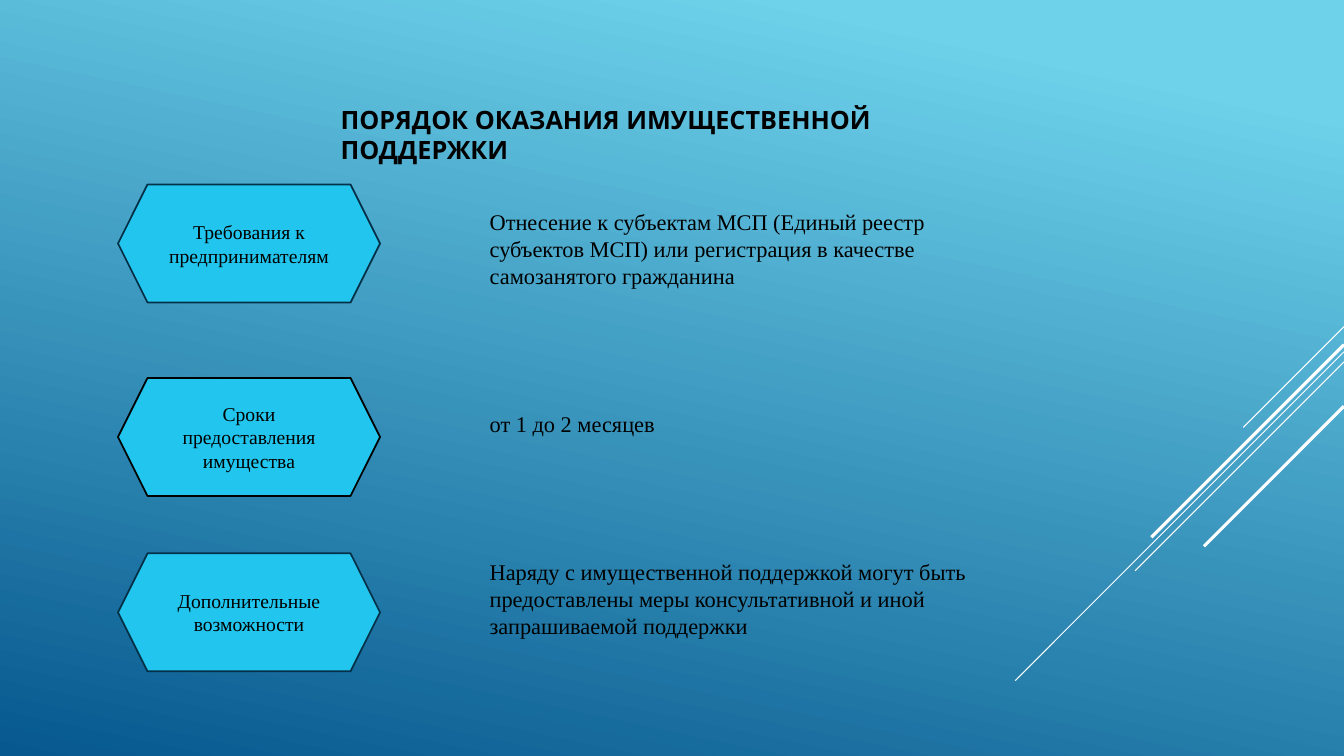
from lxml.etree import SubElement
from pptx import Presentation
from pptx.dml.color import RGBColor
from pptx.enum.shapes import MSO_CONNECTOR, MSO_SHAPE
from pptx.enum.text import MSO_ANCHOR, MSO_AUTO_SIZE, PP_ALIGN
from pptx.oxml.ns import qn
from pptx.util import Pt

SLIDE_WIDTH, SLIDE_HEIGHT = 960, 540
BODY_FONT = "Times New Roman"
BLACK, WHITE, NAVY, CYAN = "000000", "FFFFFF", "043148", "22C5ED"

# Start height at the right edge, horizontal run, line width
DIAGONALS = [
    (233.3, 72, 0.75),
    (251.3, 234.8, 0.75),
    (258.5, 149.2, 0.75),
    (246.2, 137.6, 2.25),
    (290.2, 100, 2.25),
]

# Label, hexagon top, outline, description, description top and width
ROWS = [
    ("Требования к предпринимателям", 131.8, NAVY,
     "Отнесение к субъектам МСП (Единый реестр субъектов МСП) или регистрация "
     "в качестве самозанятого гражданина", 145.4, 386),
    ("Сроки предоставления имущества", 270, BLACK,
     "от 1 до 2 месяцев", 289.4, 399),
    ("Дополнительные возможности", 395.3, NAVY,
     "Наряду с имущественной поддержкой могут быть предоставлены меры "
     "консультативной и иной запрашиваемой поддержки", 395.3, 399),
]


def color(hex_string):
    return RGBColor.from_string(hex_string)


def paint_background(slide):
    fill = slide.background.fill
    fill.gradient()
    fill.gradient_angle = 258
    stops = [(0.11, "6ED2EB"), (1, "06588E")]
    for stop, (position, hex_string) in zip(fill.gradient_stops, stops):
        stop.position = position
        stop.color.rgb = color(hex_string)


def add_diagonal(slide, top, run, width):
    """Draw a 45-degree line down and left from the right slide edge."""
    line = slide.shapes.add_connector(
        MSO_CONNECTOR.STRAIGHT, Pt(SLIDE_WIDTH), Pt(top),
        Pt(SLIDE_WIDTH - run), Pt(top + run))
    line.line.color.rgb = color(WHITE)
    line.line.width = Pt(width)
    SubElement(line._element.spPr, qn("a:effectLst"))


def write(paragraph, text, size, font=BODY_FONT, bold=False):
    run = paragraph.add_run()
    run.text = text
    run.font.name = font
    run.font.size = Pt(size)
    run.font.bold = bold
    run.font.color.rgb = color(BLACK)


def add_text(slide, left, top, width, height, text, size, **style):
    frame = slide.shapes.add_textbox(
        Pt(left), Pt(top), Pt(width), Pt(height)).text_frame
    frame.word_wrap = True
    frame.auto_size = MSO_AUTO_SIZE.SHAPE_TO_FIT_TEXT
    write(frame.paragraphs[0], text, size, **style)


def add_hexagon(slide, top, outline, label):
    shape = slide.shapes.add_shape(
        MSO_SHAPE.HEXAGON, Pt(84.3), Pt(top), Pt(187.2), Pt(84.3))
    shape.shadow.inherit = False
    shape.fill.solid()
    shape.fill.fore_color.rgb = color(CYAN)
    shape.line.color.rgb = color(outline)
    shape.line.width = Pt(1.25)
    frame = shape.text_frame
    frame.word_wrap = True
    frame.vertical_anchor = MSO_ANCHOR.MIDDLE
    paragraph = frame.paragraphs[0]
    paragraph.alignment = PP_ALIGN.CENTER
    write(paragraph, label, 14)


def main():
    presentation = Presentation()
    presentation.slide_width = Pt(SLIDE_WIDTH)
    presentation.slide_height = Pt(SLIDE_HEIGHT)
    slide = presentation.slides.add_slide(presentation.slide_layouts[6])
    paint_background(slide)
    for top, run, width in DIAGONALS:
        add_diagonal(slide, top, run, width)
    add_text(slide, 236.2, 70.6, 506, 29, "ПОРЯДОК ОКАЗАНИЯ ИМУЩЕСТВЕННОЙ ПОДДЕРЖКИ",
             18, font="League Spartan", bold=True)
    for label, top, outline, description, text_top, text_width in ROWS:
        add_hexagon(slide, top, outline, label)
        text_height = 65.5 if len(description) > 40 else 26.6
        add_text(slide, 342.7, text_top, text_width, text_height, description, 16)
    presentation.save("out.pptx")


if __name__ == "__main__":
    main()
